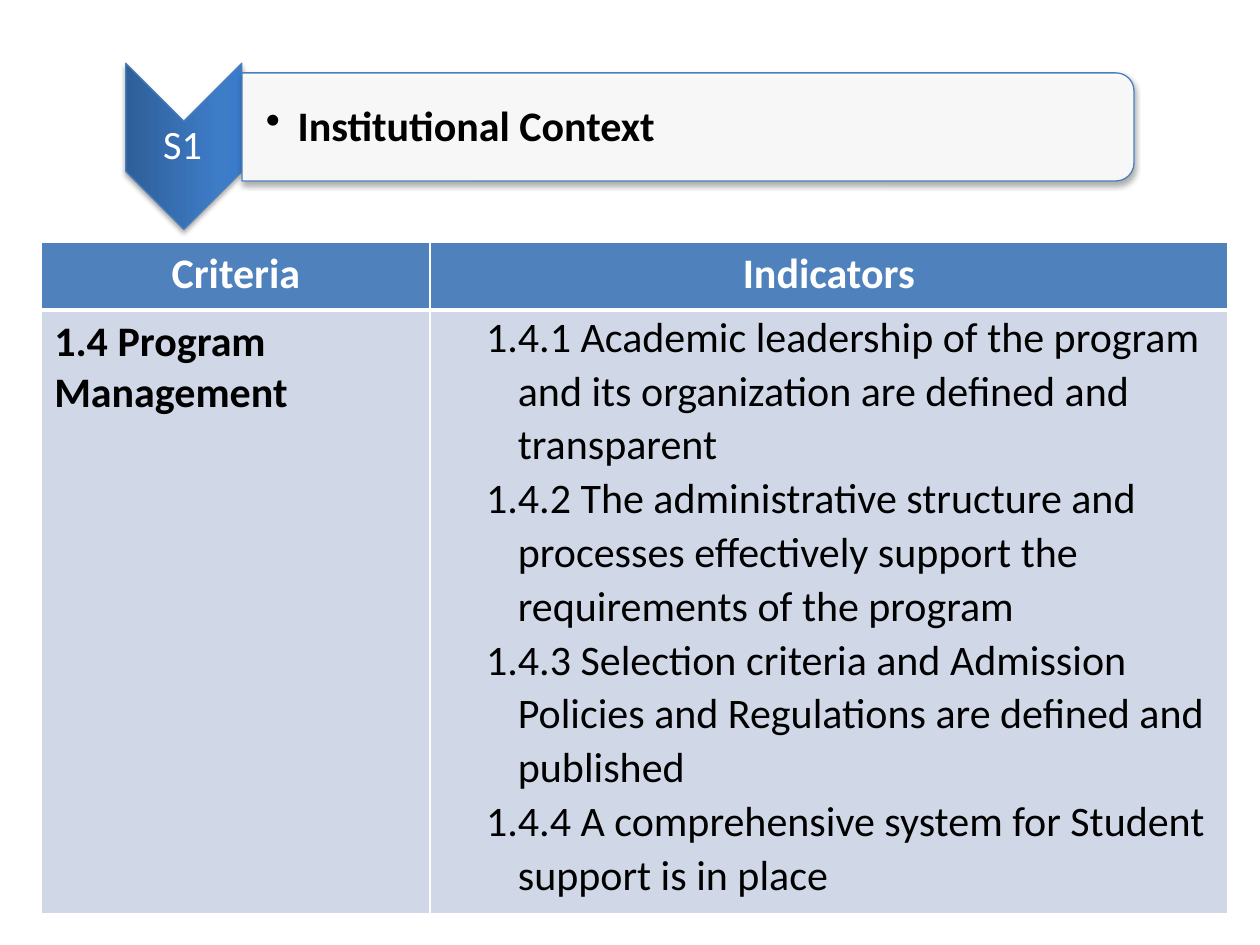
"""Build the slide on institutional context: a labelled banner above a criteria table."""
from lxml import etree
from pptx import Presentation
from pptx import util as u
from pptx.dml.color import RGBColor
from pptx.enum import shapes, text
from pptx.oxml import parse_xml
from pptx.oxml.ns import nsdecls, qn

WHITE = RGBColor(0xFF, 0xFF, 0xFF)
BLACK = RGBColor(0, 0, 0)
OUTLINE = RGBColor(0x4B, 0x7E, 0xBC)
HEADER = RGBColor(0x4F, 0x81, 0xBD)
BODY = RGBColor(0xD0, 0xD8, 0xE8)

SECTION, TITLE = "S1", "Institutional Context"
HEADINGS = ["Criteria", "Indicators"]
CRITERION = "1.4 Program Management"
INDICATORS = [
    "4.1 Academic leadership of the program and its organization are defined and transparent",
    "1.4.2 The administrative structure and processes effectively support the requirements of the program",
    "1.4.3 Selection criteria and Admission Policies and Regulations are defined and published",
    "1.4.4 A comprehensive system for Student support is in place",
]
GRADIENT = [(0, "2F5F99"), (80, "3D7CC7"), (100, "3A7CCB")]
BANNER_SHAPES = {
    "chevron": (shapes.MSO_SHAPE.CHEVRON, (2.03, 1.78, 3.35, 2.34)),
    "panel": (shapes.MSO_SHAPE.ROUND_2_SAME_RECTANGLE, (12.78, -6.43, 2.18, 17.98)),
}
LABEL_BOX = (2.51, 2.44, 2.34, 1.02)
TITLE_BOX = (4.88, 1.6, 17.88, 1.96)
TABLE_BOX = (0.84, 4.88, 23.91, 13.54)
COLUMN_WIDTHS = [7.83, 16.08]
ROW_HEIGHTS = [1.37, 12.17]

BANNER_FRAME = dict(word_wrap=True, auto_size=text.MSO_AUTO_SIZE.NONE,
                    vertical_anchor=text.MSO_ANCHOR.MIDDLE,
                    **{f"margin_{side}": u.Cm(0.05) for side in ("left", "top", "right", "bottom")})
LABEL_FONT = dict(name="Calibri", size=u.Pt(23), bold=False)
TEXT_FONT = dict(name="Calibri", size=u.Pt(24), bold=True)


def apply(target, values):
    for name, value in values.items():
        setattr(target, name, value)


def lengths(box):
    return [u.Cm(value) for value in box]


def write(paragraph, words, font, color, **layout):
    run = paragraph.add_run()
    run.text = words
    apply(run.font, font)
    run.font.color.rgb = color
    apply(paragraph, layout)


def hang(paragraph, margin, bullet=None, **attributes):
    properties = paragraph._p.get_or_add_pPr()
    properties.set("marL", str(u.Cm(margin)))
    properties.set("indent", str(-u.Cm(0.64)))
    if bullet:
        etree.SubElement(properties, qn(f"a:{bullet}"), attributes)


def add_banner_shape(slide, kind, box):
    shape = slide.shapes.add_shape(kind, *lengths(box))
    shape.rotation = 90
    shape.fill.solid()
    shape.fill.fore_color.rgb = WHITE
    shape.line.color.rgb = OUTLINE
    shape.line.width = u.Pt(0.75)
    shape._element.spPr.append(parse_xml(
        f'<a:effectLst {nsdecls("a")}><a:outerShdw blurRad="{u.Pt(3.1)}" dist="{u.Pt(1.8)}" '
        'dir="5400000" rotWithShape="0"><a:srgbClr val="000000"><a:alpha val="35000"/>'
        '</a:srgbClr></a:outerShdw></a:effectLst>'))
    return shape


def add_banner(slide):
    chevron, panel = [add_banner_shape(slide, *parts) for parts in BANNER_SHAPES.values()]
    stops = "".join(f'<a:gs pos="{position * 1000}"><a:srgbClr val="{color}"/></a:gs>'
                    for position, color in GRADIENT)
    solid = chevron._element.spPr.find(qn("a:solidFill"))
    solid.getparent().replace(solid, parse_xml(
        f'<a:gradFill {nsdecls("a")} rotWithShape="1"><a:gsLst>{stops}</a:gsLst>'
        '<a:lin ang="16200000" scaled="0"/></a:gradFill>'))
    panel_color = panel._element.spPr.find(qn("a:solidFill"))[0]
    etree.SubElement(panel_color, qn("a:alpha"), val="90000")

    label = slide.shapes.add_textbox(*lengths(LABEL_BOX)).text_frame
    apply(label, BANNER_FRAME)
    write(label.paragraphs[0], SECTION, LABEL_FONT, WHITE,
          alignment=text.PP_ALIGN.CENTER, line_spacing=0.9)

    title = slide.shapes.title
    apply(title, dict(zip(("left", "top", "width", "height"), lengths(TITLE_BOX))))
    apply(title.text_frame, BANNER_FRAME | dict(margin_left=u.Cm(0.48)))
    paragraph = title.text_frame.paragraphs[0]
    write(paragraph, TITLE, TEXT_FONT, BLACK, alignment=text.PP_ALIGN.LEFT, line_spacing=0.9)
    hang(paragraph, 0.64, "buChar", char="•")
    slide.shapes._spTree.append(title._element)


def format_cell(cell, color, bottom_width):
    cell.fill.solid()
    cell.fill.fore_color.rgb = color
    properties = cell._tc.get_or_add_tcPr()
    widths = dict(lnL=1, lnR=1, lnT=1, lnB=bottom_width)
    for index, (edge, width) in enumerate(widths.items()):
        properties.insert(index, parse_xml(
            f'<a:{edge} {nsdecls("a")} w="{u.Pt(width)}"><a:solidFill>'
            f'<a:srgbClr val="{WHITE}"/></a:solidFill></a:{edge}>'))


def add_criteria_table(slide):
    table = slide.shapes.add_table(2, 2, *lengths(TABLE_BOX)).table
    for column, width in zip(table.columns, COLUMN_WIDTHS):
        column.width = u.Cm(width)
    for row, height, color, bottom in zip(table.rows, ROW_HEIGHTS, (HEADER, BODY), (3, 1)):
        row.height = u.Cm(height)
        for cell in row.cells:
            format_cell(cell, color, bottom)
    for cell, heading in zip(table.rows[0].cells, HEADINGS):
        write(cell.text_frame.paragraphs[0], heading, TEXT_FONT, WHITE,
              alignment=text.PP_ALIGN.CENTER)
    criterion, indicators = table.rows[1].cells
    write(criterion.text_frame.paragraphs[0], CRITERION, TEXT_FONT, BLACK)
    apply(indicators, dict(margin_left=u.Cm(0.18), margin_right=u.Cm(0.18),
                           margin_top=0, margin_bottom=0))
    frame = indicators.text_frame
    for index, indicator in enumerate(INDICATORS):
        paragraph = frame.add_paragraph() if index else frame.paragraphs[0]
        write(paragraph, indicator, TEXT_FONT | dict(bold=False), BLACK, line_spacing=1.05)
        if index:
            hang(paragraph, 1.59)
        else:
            hang(paragraph, 1.59, "buAutoNum", type="arabicPeriod")


def main():
    presentation = Presentation()
    presentation.slide_width, presentation.slide_height = u.Cm(25.4), u.Cm(19.05)
    slide = presentation.slides.add_slide(presentation.slide_layouts[5])
    add_banner(slide)
    add_criteria_table(slide)
    presentation.save("out.pptx")


if __name__ == "__main__":
    main()
